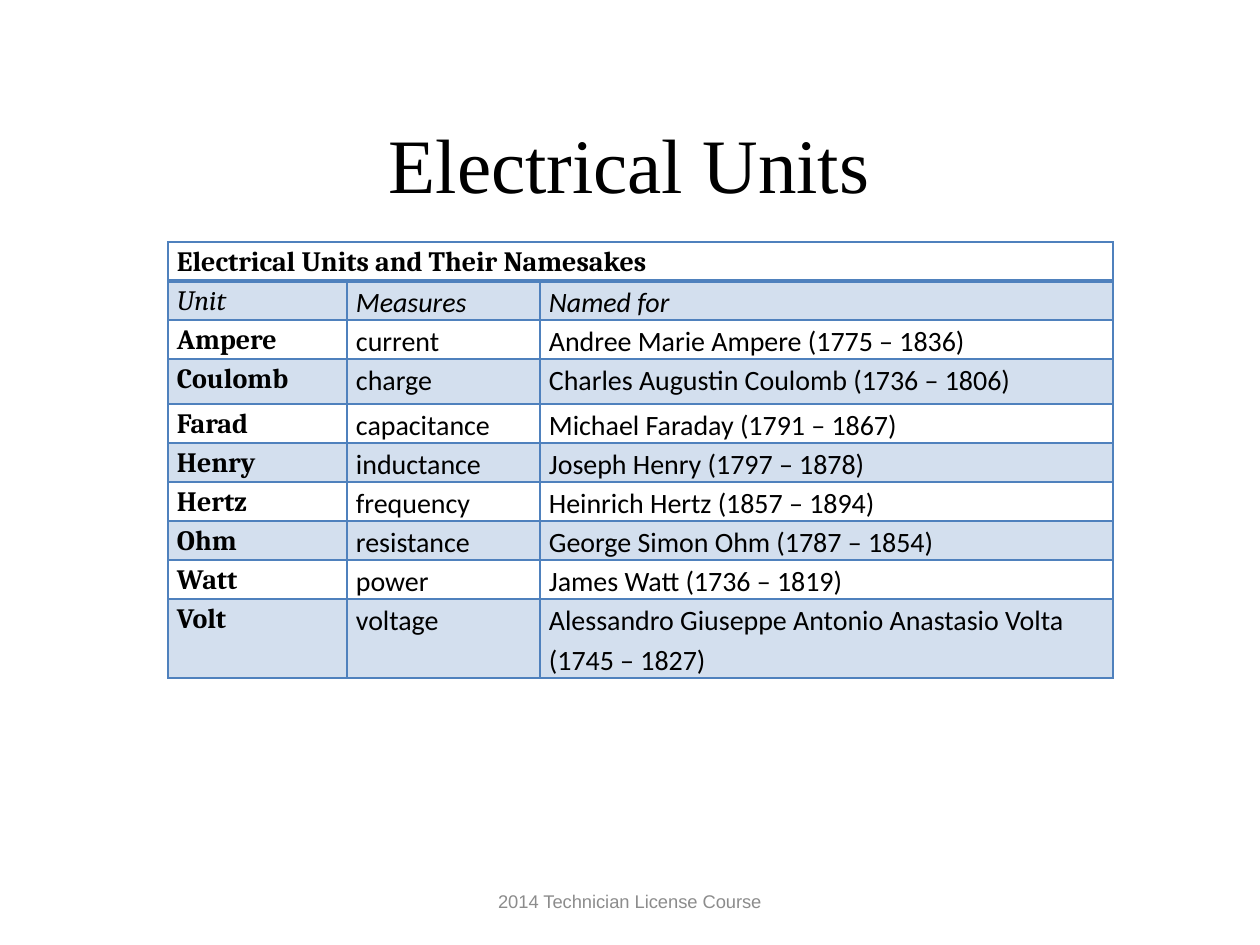
"""Build the Electrical Units slide with its table of namesakes."""
from lxml import etree
from pptx import Presentation
from pptx.dml.color import RGBColor
from pptx.enum.text import MSO_ANCHOR, PP_ALIGN
from pptx.oxml.ns import qn
from pptx.util import Emu, Pt

MIDDLE, CENTER = MSO_ANCHOR.MIDDLE, PP_ALIGN.CENTER

TITLE = "Electrical Units"
FOOTER = "2014 Technician License Course"
ROWS = [
    ("Electrical Units and Their Namesakes", "", ""),
    ("Unit", "Measures", "Named for"),
    ("Ampere", "current", "Andree Marie Ampere (1775 – 1836)"),
    ("Coulomb", "charge", "Charles Augustin Coulomb (1736 – 1806)"),
    ("Farad", "capacitance", "Michael Faraday (1791 – 1867)"),
    ("Henry", "inductance", "Joseph Henry (1797 – 1878)"),
    ("Hertz", "frequency", "Heinrich Hertz (1857 – 1894)"),
    ("Ohm", "resistance", "George Simon Ohm (1787 – 1854)"),
    ("Watt", "power", "James Watt (1736 – 1819)"),
    ("Volt", "voltage", "Alessandro Giuseppe Antonio Anastasio Volta (1745 – 1827)"),
]
COL_WIDTHS = [179, 193, 573]
ROW_HEIGHT = 39
TALL_ROWS = {"Coulomb": 45, "Volt": 79}

THEME = {
    "title": ("Times New Roman", 44, "000000"),
    "footer": ("Arial", 10.5, "8C8C8C"),
    "unit": ("Cambria", 16, "000000"),
    "detail": ("Calibri", 16, "000000"),
    "band": "D3DFEE",
    "border": "4F81BD",
    "thin": 1,
    "thick": 2.25,
}


def px(n):
    return Emu(round(n * 914400 / 126))


def set_font(p, style, bold=False, italic=False):
    name, size, color = THEME[style]
    font = p.font
    font.name, font.size = name, Pt(size)
    font.bold, font.italic = bold, italic
    font.color.rgb = RGBColor.from_string(color)


def add_text(s, text, style, left, top, width, height):
    tf = s.shapes.add_textbox(px(left), px(top), px(width), px(height)).text_frame
    tf.word_wrap = True
    tf.vertical_anchor = MIDDLE
    p = tf.paragraphs[0]
    p.text, p.alignment = text, CENTER
    set_font(p, style)


def set_borders(cell, top, bottom):
    thin = THEME["thin"]
    tcPr = cell._tc.get_or_add_tcPr()
    for side, width in (("L", thin), ("R", thin), ("T", top), ("B", bottom)):
        ln = etree.SubElement(tcPr, qn(f"a:ln{side}"), w=str(Pt(width)))
        fill = etree.SubElement(ln, qn("a:solidFill"))
        etree.SubElement(fill, qn("a:srgbClr"), val=THEME["border"])


def fill_cell(cell, text, row, col):
    cell.margin_left = cell.margin_right = px(9)
    cell.margin_top = cell.margin_bottom = 0
    set_borders(cell, THEME["thick" if row == 1 else "thin"],
                THEME["thick" if row == 0 else "thin"])
    if row % 2:
        cell.fill.solid()
        cell.fill.fore_color.rgb = RGBColor.from_string(THEME["band"])
    else:
        cell.fill.background()
    p = cell.text_frame.paragraphs[0]
    p.text, p.line_spacing = text, 1.15
    set_font(p, "detail" if col else "unit", bold=col == 0 and row != 1, italic=row == 1)


def add_units_table(s, left, top):
    heights = [TALL_ROWS.get(row[0], ROW_HEIGHT) for row in ROWS]
    table = s.shapes.add_table(len(ROWS), len(COL_WIDTHS), px(left), px(top),
                               px(sum(COL_WIDTHS)), px(sum(heights))).table
    table.first_row = table.horz_banding = False
    for column, width in zip(table.columns, COL_WIDTHS):
        column.width = px(width)
    for r, (values, height) in enumerate(zip(ROWS, heights)):
        table.rows[r].height = px(height)
        for c, text in enumerate(values):
            fill_cell(table.cell(r, c), text, r, c)
    table.cell(0, 0).merge(table.cell(0, len(COL_WIDTHS) - 1))


def main():
    prs = Presentation()
    prs.slide_width, prs.slide_height = px(1260), px(945)
    s = prs.slides.add_slide(prs.slide_layouts[6])
    add_text(s, TITLE, "title", 94, 84, 1071, 158)
    add_text(s, FOOTER, "footer", 430, 876, 400, 50)
    add_units_table(s, 168, 242)
    prs.save("out.pptx")


if __name__ == "__main__":
    main()
